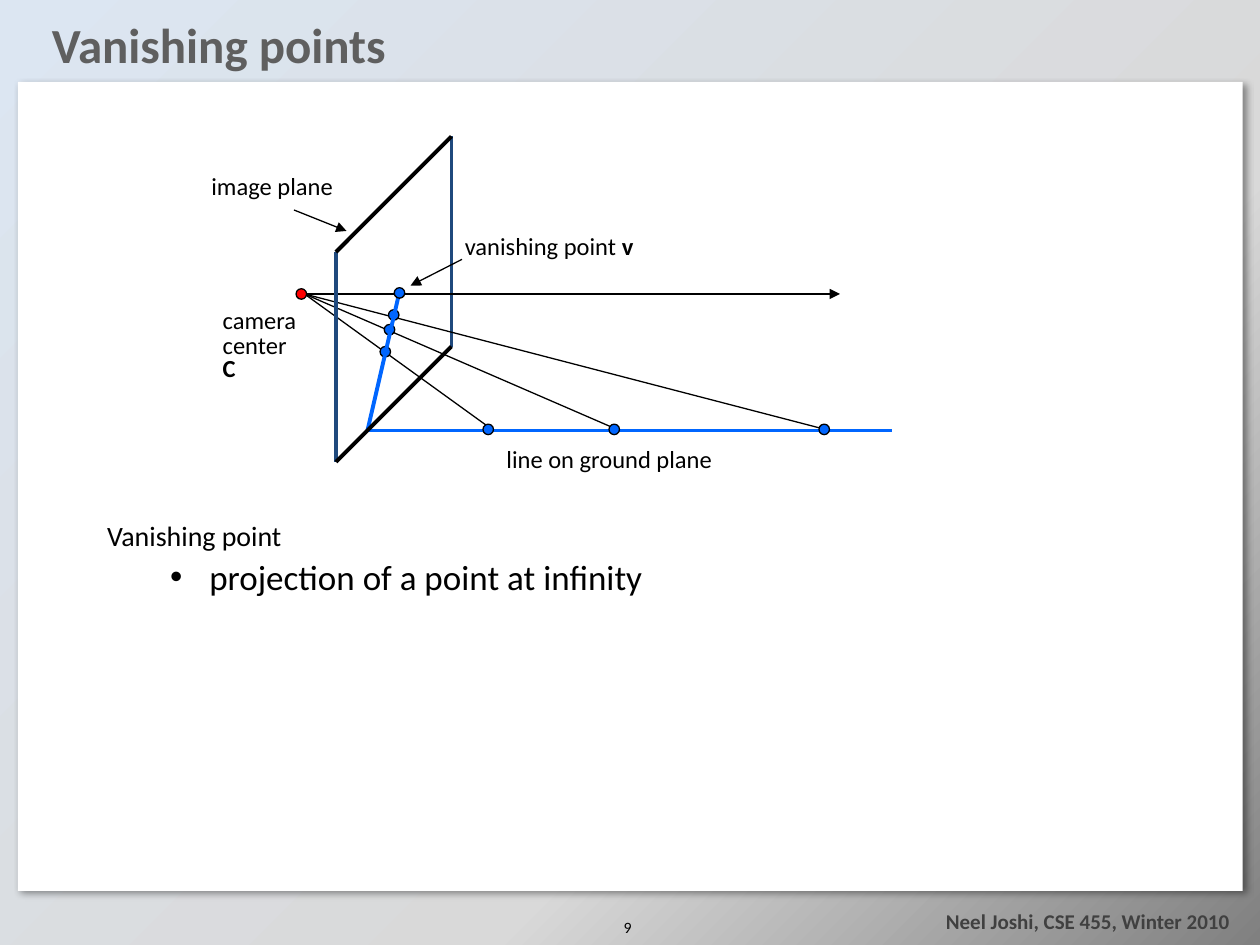
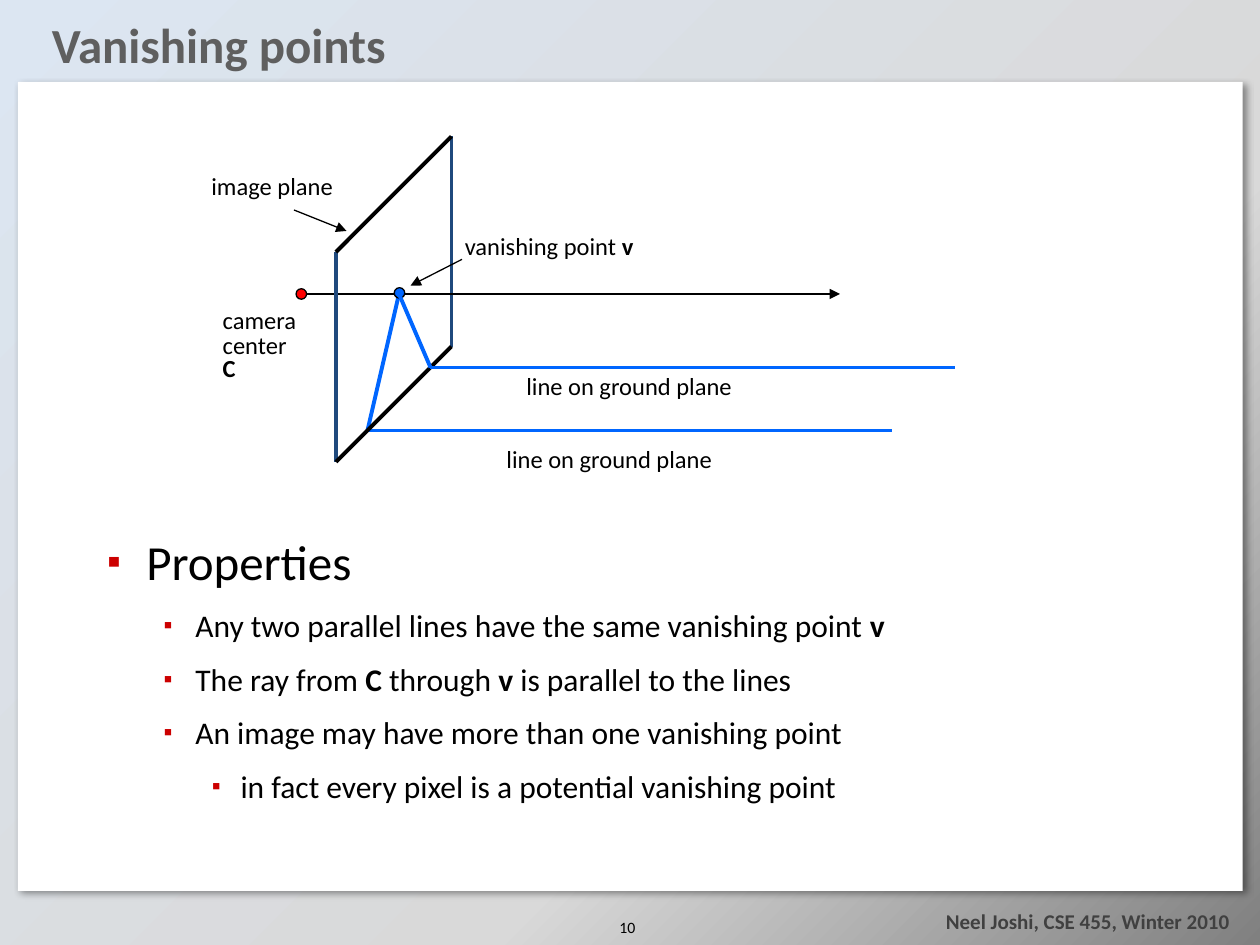
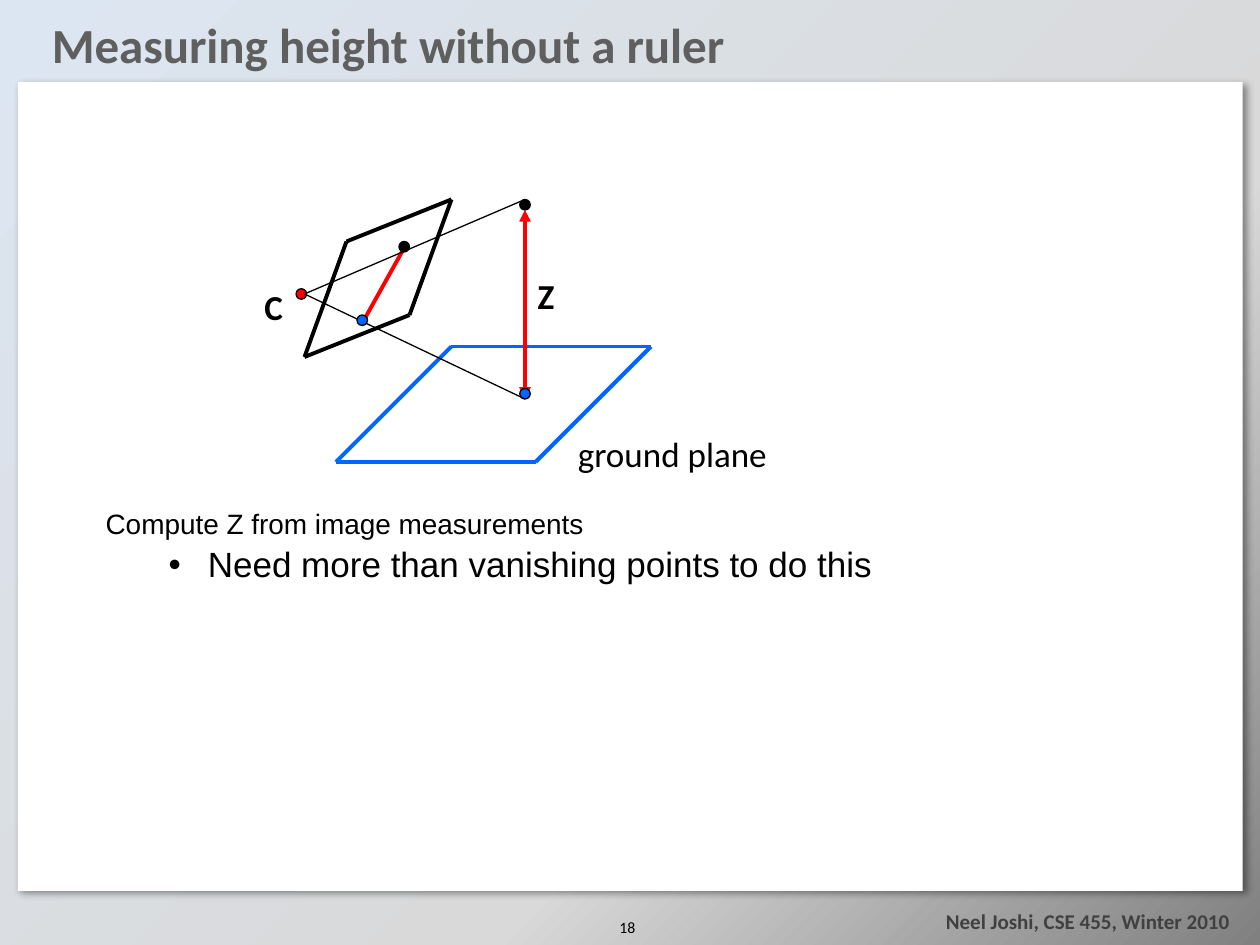
from dataclasses import dataclass
from itertools import pairwise

from pptx import Presentation
from pptx.dml.color import RGBColor
from pptx.enum.shapes import MSO_CONNECTOR, MSO_SHAPE
from pptx.enum.text import MSO_ANCHOR, MSO_AUTO_SIZE, PP_ALIGN
from pptx.oxml import parse_xml
from pptx.oxml.ns import nsdecls
from pptx.util import Cm, Pt


@dataclass(frozen=True)
class Theme:
    font: str = "Calibri"
    black: str = "000000"
    white: str = "FFFFFF"
    title: str = "5F5F5F"
    footer: str = "404040"
    blue: str = "0066FF"
    navy: str = "1F497D"
    red: str = "FF0000"
    bullet: str = "CC0000"
    background: tuple = ((0, "DCE6F2"), (65, "D9D9D9"), (100, "808080"))
    title_size: float = 28
    heading_size: float = 28
    large_size: float = 20
    item_size: float = 18
    lead_size: float = 16
    label_size: float = 14
    footer_size: float = 12
    number_size: float = 9
    thin: float = 0.75
    thick: float = 2.25


THEME = Theme()
GRID = 2.54 / 12

PANEL_BOX = (0.36, 1.65, 24.69, 16.31)
FOOTER_BOX = (17.78, 18.19, 7.26, 0.79)
NUMBER_BOX = (12.04, 18.49, 1.22, 0.51)
TITLE_BOX = (0.79, 0.41, 23.8, 1.12)
FOOTER = "Neel Joshi, CSE 455, Winter 2010"

CAMERA = (29, 28)
VANISHING = (38, 28)
GROUND_START = (35, 41)


def line(*points, color=THEME.black, width=THEME.thin, head=False, tail=False):
    return "line", points, dict(color=color, width=width, head=head, tail=tail)


def dot(x, y, color=THEME.blue):
    return "dot", (x, y), dict(color=color)


CAMERA_DOT = dot(28.7, 28, THEME.red)

GROUND_LINE = [
    line((43, 13), (43, 33), color=THEME.navy, width=THEME.thick),
    line(GROUND_START, (85, 41), color=THEME.blue, width=THEME.thick),
]

PROJECTIONS = [
    mark
    for end, image_dot in (
        (47, (36.7, 33.5)),
        (59, (37.1, 31.4)),
        (79, (37.5, 30)),
    )
    for mark in (line(CAMERA, (end, 41)), dot(*image_dot), dot(end - 0.5, 40.9))
]

VANISHING_SCENE = [
    line(GROUND_START, VANISHING, color=THEME.blue, width=THEME.thick),
    line(CAMERA, (80, 28), tail=True),
    dot(38.05, 27.9),
    line((44, 24.7), (39.1, 27.2), tail=True),
    line((28, 20), (33, 22), tail=True),
    line((32, 24), (32, 44), color=THEME.navy, width=THEME.thick),
    line((32, 44), (43, 33), width=THEME.thick),
    line((32, 24), (43, 13), width=THEME.thick),
    CAMERA_DOT,
]

SECOND_LINE = [
    line(VANISHING, (41, 35), (91, 35), color=THEME.blue, width=THEME.thick),
]

HEIGHT_SCENE = [
    line((34.6, 30.6), (38.5, 23.6), color=THEME.red, width=THEME.thick),
    line(CAMERA, (50, 19)),
    CAMERA_DOT,
    line((32, 44), (43, 33), (62, 33), (51, 44), (32, 44),
         color=THEME.blue, width=THEME.thick),
    line((50, 38), (50, 20), color=THEME.red, width=THEME.thick,
         head=True, tail=True),
    dot(50, 37.5),
    dot(50, 19.5, THEME.black),
    line((33, 23), (29, 34), (39, 30), (43, 19), (33, 23), width=THEME.thick),
    line(CAMERA, (50, 38)),
    dot(38.5, 23.5, THEME.black),
    dot(34.5, 30.5),
]

SCENE_LABELS = [
    ((4.01, 3.38, 3.1, 0.79), ["image plane"], THEME.label_size),
    ((9.12, 4.6, 4.11, 0.79), ["vanishing point *v*"], THEME.label_size),
    ((9.96, 8.89, 4.85, 0.79), ["line on ground plane"], THEME.label_size),
    ((4.24, 6.1, 2.03, 1.75), ["camera", "center", "*C*"], THEME.label_size),
]
SECOND_LABEL = [
    ((10.36, 7.42, 4.85, 0.79), ["line on ground plane"], THEME.label_size),
]
HEIGHT_LABELS = [
    ((5.08, 5.72, 0.94, 1.02), ["*C*"], THEME.large_size),
    ((11.4, 8.69, 4.52, 1.02), ["ground plane"], THEME.large_size),
    ((10.59, 5.51, 0.91, 1.02), ["*Z*"], THEME.large_size),
]

LEAD = dict(size=THEME.lead_size, indent=0.97, hanging=0.97, line_spacing=0.9)
POINT = dict(size=THEME.large_size, indent=2.06, hanging=0.79, line_spacing=0.9,
             space_before=4, level=1, bullet="•")
SQUARE = dict(bullet="▪", bullet_color=THEME.bullet, bullet_size=80)
HEADING = dict(SQUARE, size=THEME.heading_size, indent=0.79, hanging=0.79)
ITEM = dict(SQUARE, size=THEME.item_size, indent=1.78, hanging=0.64,
            space_before=9, level=1)
SUBITEM = dict(ITEM, indent=2.69, hanging=0.58, level=2)

SLIDES = [
    dict(
        title="Vanishing points",
        number="9",
        marks=GROUND_LINE + PROJECTIONS + VANISHING_SCENE,
        labels=SCENE_LABELS,
        body_box=(1.91, 10.41, 21.59, 6.73),
        body_font=THEME.font,
        body=[
            ("Vanishing point", LEAD),
            ("projection of a point at infinity", POINT),
        ],
    ),
    dict(
        title="Vanishing points",
        number="10",
        marks=GROUND_LINE + VANISHING_SCENE + SECOND_LINE,
        labels=SCENE_LABELS + SECOND_LABEL,
        body_box=(1.91, 10.59, 23.06, 6.35),
        body_font=THEME.font,
        body=[
            ("Properties", HEADING),
            ("Any two parallel lines have the same vanishing point *v*", ITEM),
            ("The ray from *C* through *v* is parallel to the lines", ITEM),
            ("An image may have more than one vanishing point", ITEM),
            ("in fact every pixel is a potential vanishing point", SUBITEM),
        ],
    ),
    dict(
        title="Measuring height without a ruler",
        number="18",
        marks=HEIGHT_SCENE,
        labels=HEIGHT_LABELS,
        body_box=(1.88, 10.16, 22.89, 7.82),
        body_font="Arial",
        body=[
            ("Compute Z from image measurements", LEAD),
            ("Need more than vanishing points to do this", POINT),
        ],
    ),
]


def drawing_xml(tag, attributes="", content=""):
    return parse_xml(f'<a:{tag} {nsdecls("a")} {attributes}>{content}</a:{tag}>')


def write(frame, text, size, font=THEME.font, color=THEME.black, bold=False,
          align=PP_ALIGN.LEFT, line_spacing=1.0, space_before=0, level=0,
          indent=0, hanging=0, bullet=None, bullet_color=None, bullet_size=100):
    paragraph = frame.add_paragraph() if frame.text else frame.paragraphs[0]
    paragraph.alignment = align
    paragraph.level = level
    paragraph.line_spacing = line_spacing
    paragraph.space_before = Pt(space_before)
    properties = paragraph._p.get_or_add_pPr()
    properties.set("marL", str(Cm(indent)))
    properties.set("indent", str(-Cm(hanging)))
    if bullet:
        fill = f'<a:srgbClr val="{bullet_color or color}"/>'
        properties.append(drawing_xml("buClr", content=fill))
        properties.append(drawing_xml("buSzPct", f'val="{bullet_size * 1000}"'))
        properties.append(drawing_xml("buFont", 'typeface="Arial"'))
        properties.append(drawing_xml("buChar", f'char="{bullet}"'))
    for index, part in enumerate(text.split("*")):
        if part:
            run = paragraph.add_run()
            run.text = part
            run.font.size = Pt(size)
            run.font.name = font
            run.font.bold = bold or index % 2 == 1
            run.font.color.rgb = RGBColor.from_string(color)


def add_text_box(slide, box, wrap=True, anchor=MSO_ANCHOR.TOP):
    shape = slide.shapes.add_textbox(*map(Cm, box))
    frame = shape.text_frame
    frame.word_wrap = wrap
    frame.auto_size = MSO_AUTO_SIZE.NONE if wrap else MSO_AUTO_SIZE.SHAPE_TO_FIT_TEXT
    frame.vertical_anchor = anchor
    return shape


def add_filled_shape(slide, preset, box, color):
    shape = slide.shapes.add_shape(preset, *map(Cm, box))
    shape.shadow.inherit = False
    shape.fill.solid()
    shape.fill.fore_color.rgb = RGBColor.from_string(color)
    return shape


def draw_line(slide, points, color, width, head, tail):
    for start, end in pairwise(points):
        ends = [Cm(value * GRID) for value in (*start, *end)]
        connector = slide.shapes.add_connector(MSO_CONNECTOR.STRAIGHT, *ends)
        connector.line.color.rgb = RGBColor.from_string(color)
        connector.line.width = Pt(width)
        properties = connector.element.spPr
        for tag, wanted in (("headEnd", head), ("tailEnd", tail)):
            if wanted:
                properties.get_or_add_ln().append(drawing_xml(tag, 'type="triangle"'))
        properties.append(drawing_xml("effectLst"))


def draw_dot(slide, center, color):
    left, top = ((value - 0.5) * GRID for value in center)
    shape = add_filled_shape(slide, MSO_SHAPE.OVAL, (left, top, GRID, GRID), color)
    shape.line.color.rgb = RGBColor.from_string(THEME.black)
    shape.line.width = Pt(THEME.thin)


def set_background(master):
    stops = "".join(
        f'<a:gs pos="{position * 1000}"><a:srgbClr val="{color}"/></a:gs>'
        for position, color in THEME.background
    )
    fill = master.background.fill
    fill.solid()
    properties = master.element.cSld.bg.bgPr
    properties.replace(
        properties[0],
        drawing_xml("gradFill", 'rotWithShape="1"',
                    f'<a:gsLst>{stops}</a:gsLst><a:lin ang="2700000" scaled="0"/>'),
    )


def add_frame(slide, master):
    panel = add_filled_shape(slide, MSO_SHAPE.RECTANGLE, PANEL_BOX, THEME.white)
    panel.line.fill.background()
    shadow = drawing_xml(
        "outerShdw",
        f'blurRad="{Pt(4)}" dist="{Pt(3)}" dir="2700000" algn="tl" rotWithShape="0"',
        f'<a:srgbClr val="{THEME.black}"><a:alpha val="40000"/></a:srgbClr>',
    )
    panel.element.spPr[-1].append(shadow)
    footer = add_text_box(slide, FOOTER_BOX)
    write(footer.text_frame, FOOTER, THEME.footer_size, color=THEME.footer,
          bold=True, align=PP_ALIGN.RIGHT)
    for identifier, shape in enumerate((panel, footer), start=100):
        shape.element.xpath("./p:nvSpPr/p:cNvPr")[0].set("id", str(identifier))
        master.shapes.element.append(shape.element)


def add_title(slide, text):
    title = slide.shapes.title
    title.left, title.top, title.width, title.height = map(Cm, TITLE_BOX)
    frame = title.text_frame
    frame.word_wrap = True
    frame.auto_size = MSO_AUTO_SIZE.NONE
    frame.vertical_anchor = MSO_ANCHOR.MIDDLE
    write(frame, text, THEME.title_size, color=THEME.title, bold=True,
          line_spacing=0.85)


def build_slide(slide, content):
    add_title(slide, content["title"])
    number = add_text_box(slide, NUMBER_BOX, anchor=MSO_ANCHOR.BOTTOM)
    write(number.text_frame, content["number"], THEME.number_size,
          align=PP_ALIGN.CENTER)
    draw = {"line": draw_line, "dot": draw_dot}
    for kind, place, style in content["marks"]:
        draw[kind](slide, place, **style)
    for box, lines, size in content["labels"]:
        label = add_text_box(slide, box, wrap=False)
        for index, text in enumerate(lines):
            write(label.text_frame, text, size, line_spacing=0.8 if index else 0.9)
    body = add_text_box(slide, content["body_box"])
    for text, style in content["body"]:
        write(body.text_frame, text, font=content["body_font"], **style)


def main():
    presentation = Presentation()
    presentation.slide_width, presentation.slide_height = Cm(25.4), Cm(19.05)
    master = presentation.slide_master
    set_background(master)
    title_only = presentation.slide_layouts[5]
    for index, content in enumerate(SLIDES):
        slide = presentation.slides.add_slide(title_only)
        if index == 0:
            add_frame(slide, master)
        build_slide(slide, content)
    presentation.save("out.pptx")


if __name__ == "__main__":
    main()
